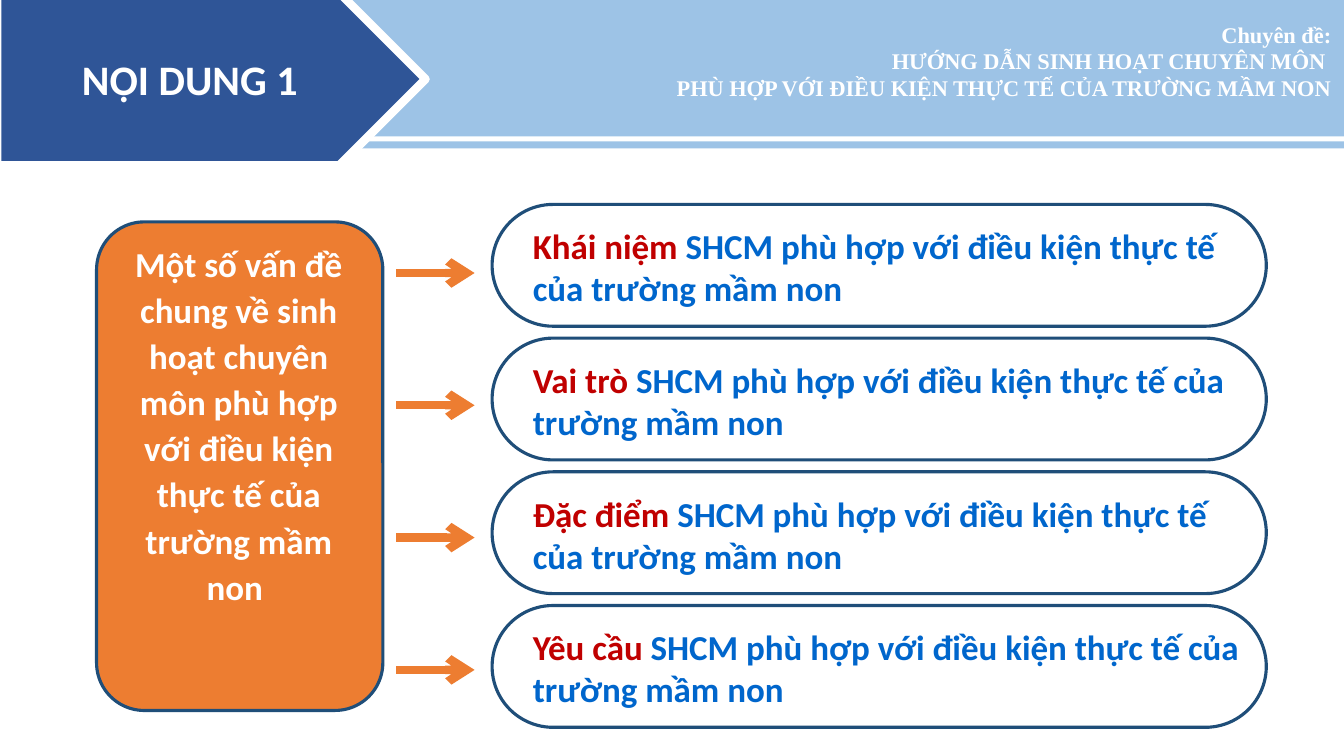
from dataclasses import dataclass
from lxml.etree import SubElement
from pptx import Presentation
from pptx.dml.color import RGBColor
from pptx.enum.shapes import MSO_CONNECTOR, MSO_SHAPE as Shape
from pptx.enum.text import MSO_ANCHOR as Anchor, PP_ALIGN as Align
from pptx.oxml.ns import qn
from pptx.util import Pt


@dataclass(frozen=True)
class Theme:
    white: str = "FFFFFF"
    banner: str = "9DC3E6"
    tag: str = "2F5597"
    panel: str = "ED7D31"
    outline: str = "1F4E79"
    keyword: str = "C00000"
    body: str = "0066CC"
    sans: str = "Calibri"
    serif: str = "Times New Roman"
    tag_size: int = 30
    body_size: int = 25
    header_size: int = 16
    outline_width: float = 2.25
    heavy_width: float = 6


THEME = Theme()
TOPIC_ENDING = "SHCM phù hợp với điều kiện thực tế của trường mầm non"
KEYWORDS = ["Khái niệm ", "Vai trò ", "Đặc điểm ", "Yêu cầu "]
PANEL_TEXT = ("Một số vấn đề chung về sinh hoạt chuyên môn phù hợp với "
              "điều kiện thực tế của trường mầm non ")
HEADER_LINES = ["Chuyên đề:", "HƯỚNG DẪN SINH HOẠT CHUYÊN MÔN ",
                "PHÙ HỢP VỚI ĐIỀU KIỆN THỰC TẾ CỦA TRƯỜNG MẦM NON"]


def color(value):
    return RGBColor.from_string(value)


def add_box(slide, kind, box, fill, line=None, width=0):
    shape = slide.shapes.add_shape(kind, *map(Pt, box))
    shape.shadow.inherit = False
    shape.fill.solid()
    shape.fill.fore_color.rgb = color(fill)
    if line:
        shape.line.color.rgb = color(line)
        shape.line.width = Pt(width)
    else:
        shape.line.fill.background()
    return shape


def add_text_frame(slide, box, anchor=Anchor.TOP):
    text_frame = slide.shapes.add_textbox(*map(Pt, box)).text_frame
    text_frame.word_wrap = True
    text_frame.vertical_anchor = anchor
    return text_frame


def format_run(run, size, fill, name=THEME.sans):
    run.font.name = name
    run.font.size = Pt(size)
    run.font.bold = True
    run.font.color.rgb = color(fill)


def add_text_shadow(run):
    fill = run.font._element.find(qn("a:solidFill"))
    effects = fill.makeelement(qn("a:effectLst"))
    fill.addnext(effects)
    shadow = SubElement(effects, qn("a:outerShdw"), blurRad="38100",
                        dist="38100", dir="2700000", algn="tl")
    shade = SubElement(shadow, qn("a:srgbClr"), val="000000")
    SubElement(shade, qn("a:alpha"), val="43000")


def add_banner(slide, box):
    left, top, width, height = box
    # Band with its white rule
    add_box(slide, Shape.RECTANGLE, box, THEME.banner)
    add_box(slide, Shape.RECTANGLE,
            (left + 160, top + height - 8.6, width - 160, 3.6), THEME.white)

    # Section tag
    tag = add_box(slide, Shape.PENTAGON, (left - 2, top + 1, 306, 123),
                  THEME.tag, THEME.white, THEME.heavy_width)
    tag.text_frame.text = "NỘI DUNG 1"
    tag.text_frame.vertical_anchor = Anchor.MIDDLE
    paragraph = tag.text_frame.paragraphs[0]
    paragraph.alignment = Align.CENTER
    format_run(paragraph.runs[0], THEME.tag_size, THEME.white)

    # Seminar title
    text_frame = add_text_frame(
        slide, (left + width - 516, top + 20.4, 514, 58.3), Anchor.MIDDLE)
    text_frame.text = "\n".join(HEADER_LINES)
    for paragraph in text_frame.paragraphs:
        paragraph.alignment = Align.RIGHT
        format_run(paragraph.runs[0], THEME.header_size, THEME.white,
                   THEME.serif)
        add_text_shadow(paragraph.runs[0])


def add_panel(slide, box):
    left, top, width, height = box
    add_box(slide, Shape.FLOWCHART_ALTERNATE_PROCESS, box, THEME.panel,
            THEME.outline, THEME.outline_width)
    text_frame = add_text_frame(
        slide, (left + 15, top + 8, width - 31.5, height - 11.5))
    text_frame.text = PANEL_TEXT
    paragraph = text_frame.paragraphs[0]
    paragraph.alignment = Align.CENTER
    paragraph.line_spacing = 1.1
    format_run(paragraph.runs[0], THEME.body_size, THEME.white)


def add_topic(slide, box, keyword):
    left, top, width, height = box
    pill = add_box(slide, Shape.ROUNDED_RECTANGLE, box, THEME.white,
                   THEME.outline, THEME.outline_width)
    pill.adjustments[0] = 0.5
    fill_color = pill.fill._xPr.find(qn("a:solidFill"))[0]
    SubElement(fill_color, qn("a:alpha"), val="95000")

    text_frame = add_text_frame(
        slide, (left + 22, top + 11, width - 33, height - 22))
    paragraph = text_frame.paragraphs[0]
    for text, fill in ((keyword, THEME.keyword), (TOPIC_ENDING, THEME.body)):
        run = paragraph.add_run()
        run.text = text
        format_run(run, THEME.body_size, fill)


def add_arrow(slide, left, middle, width):
    arrow = slide.shapes.add_connector(
        MSO_CONNECTOR.STRAIGHT, Pt(left), Pt(middle),
        Pt(left + width), Pt(middle))
    arrow.line.color.rgb = color(THEME.panel)
    arrow.line.width = Pt(THEME.heavy_width)
    SubElement(arrow.line._get_or_add_ln(), qn("a:tailEnd"), type="arrow")
    SubElement(arrow._element.spPr, qn("a:effectLst"))


def add_topics(slide, box):
    left, top, width, height = box
    pill_height = 87
    pitch = (height - pill_height) / (len(KEYWORDS) - 1)
    for row, keyword in enumerate(KEYWORDS):
        add_topic(slide, (left, top + row * pitch, width, pill_height),
                  keyword)
        add_arrow(slide, left - 68.5, top + 49 + row * 94.5, 56)


def main():
    presentation = Presentation()
    presentation.slide_width, presentation.slide_height = Pt(960), Pt(540)
    slide = presentation.slides.add_slide(presentation.slide_layouts[6])
    add_banner(slide, (0, -6, 960, 112))
    add_panel(slide, (69, 158.5, 204.5, 349))
    add_topics(slide, (351.5, 146, 553, 373.5))
    presentation.save("out.pptx")


if __name__ == "__main__":
    main()
